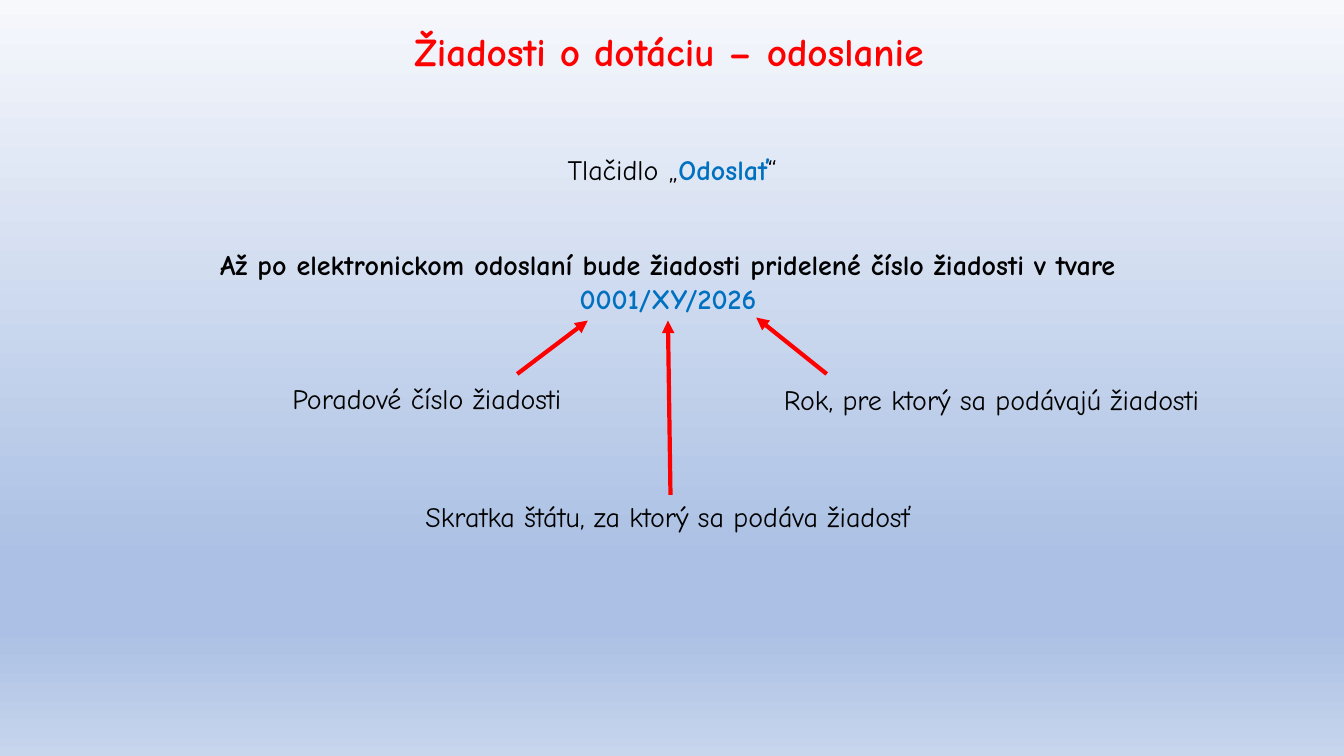
"""Build the slide on sending a grant application and its number format."""
from lxml import etree
from pptx import Presentation
from pptx.dml.color import RGBColor
from pptx.enum import shapes, text
from pptx.oxml import ns
from pptx.util import Inches, Pt

FONT = "Comic Neue"
RED = RGBColor(0xFF, 0x00, 0x00)
BLUE = RGBColor(0x00, 0x70, 0xC0)
BLACK = RGBColor(0x00, 0x00, 0x00)
SKY = [
    (0, RGBColor(0xF6, 0xF8, 0xFC)),
    (74, RGBColor(0xAB, 0xC0, 0xE4)),
    (83, RGBColor(0xAB, 0xC0, 0xE4)),
    (100, RGBColor(0xC7, 0xD5, 0xED)),
]


def set_background(s, stops):
    """Fill the background with a top-to-bottom gradient."""
    fill = s.background.fill
    fill.gradient()
    fill.gradient_angle = 270
    gs_list = s.element.xpath(".//p:bg//a:gsLst")[0]
    for gs in list(gs_list):
        gs_list.remove(gs)
    for percent, color in stops:
        gs = etree.SubElement(gs_list, ns.qn("a:gs"), pos=str(percent * 1000))
        etree.SubElement(gs, ns.qn("a:srgbClr"), val=str(color))


def write(sp, paragraphs, size=20):
    """Write centred paragraphs of (text, colour, bold) runs."""
    tf = sp.text_frame
    tf.word_wrap = True
    tf.auto_size = text.MSO_AUTO_SIZE.SHAPE_TO_FIT_TEXT
    tf.vertical_anchor = text.MSO_ANCHOR.TOP
    for i, runs in enumerate(paragraphs):
        p = tf.add_paragraph() if i else tf.paragraphs[0]
        p.alignment = text.PP_ALIGN.CENTER
        for words, color, bold in runs:
            r = p.add_run()
            r.text = words
            r.font.name = FONT
            r.font.size = Pt(size)
            r.font.bold = bold
            r.font.color.rgb = color


def add_title(s, words, left, top, width, height):
    """Place and format the title placeholder."""
    sp = s.shapes.title
    sp.left, sp.top = Inches(left), Inches(top)
    sp.width, sp.height = Inches(width), Inches(height)
    write(sp, [[(words, RED, True)]], 28)


def add_text(s, paragraphs, left, top, width, height=0.44):
    """Add a text box and return it."""
    sp = s.shapes.add_textbox(Inches(left), Inches(top), Inches(width), Inches(height))
    write(sp, paragraphs)
    return sp


def add_arrow(s, start, end):
    """Add a red arrow pointing at end and return it."""
    line = s.shapes.add_connector(
        shapes.MSO_CONNECTOR.STRAIGHT, *(Inches(v) for v in start + end))
    line.line.color.rgb = RED
    line.line.width = Pt(3)
    ln = line.line._get_or_add_ln()
    etree.SubElement(ln, ns.qn("a:tailEnd"), type="triangle")
    etree.SubElement(line.element.spPr, ns.qn("a:effectLst"))
    return line


def main():
    """Build and save the slide."""
    prs = Presentation()
    prs.slide_width, prs.slide_height = Inches(13.33), Inches(7.5)
    s = prs.slides.add_slide(prs.slide_layouts[5])
    set_background(s, SKY)
    add_title(s, "Žiadosti o dotáciu – odoslanie", 2.87, 0.22, 7.53, 0.57)

    add_text(s, [[("Tlačidlo „", BLACK, False), ("Odoslať", BLUE, True),
                  ("“", BLACK, False)]], 3.62, 1.46, 6.09)
    number = add_text(s, [
        [("Až po elektronickom odoslaní bude žiadosti pridelené číslo žiadosti v tvare",
          BLACK, True)],
        [("0001/XY/2026", BLUE, True)],
    ], 1.33, 2.41, 10.59, 0.77)

    for words, left, top, width in [
        ("Poradové číslo žiadosti", 2.56, 3.74, 3.35),
        ("Skratka štátu, za ktorý sa podáva žiadosť", 3.58, 4.91, 6.09),
        ("Rok, pre ktorý sa podávajú žiadosti", 7.42, 3.75, 4.83),
    ]:
        add_text(s, [[(words, BLACK, False)]], left, top, width)

    add_arrow(s, (5.13, 3.71), (5.83, 3.18))
    add_arrow(s, (8.2, 3.71), (7.5, 3.15))
    state_arrow = add_arrow(s, (6.65, 4.91), (6.63, 3.18))
    state_arrow.end_connect(number, 2)

    prs.save("out.pptx")


if __name__ == "__main__":
    main()
